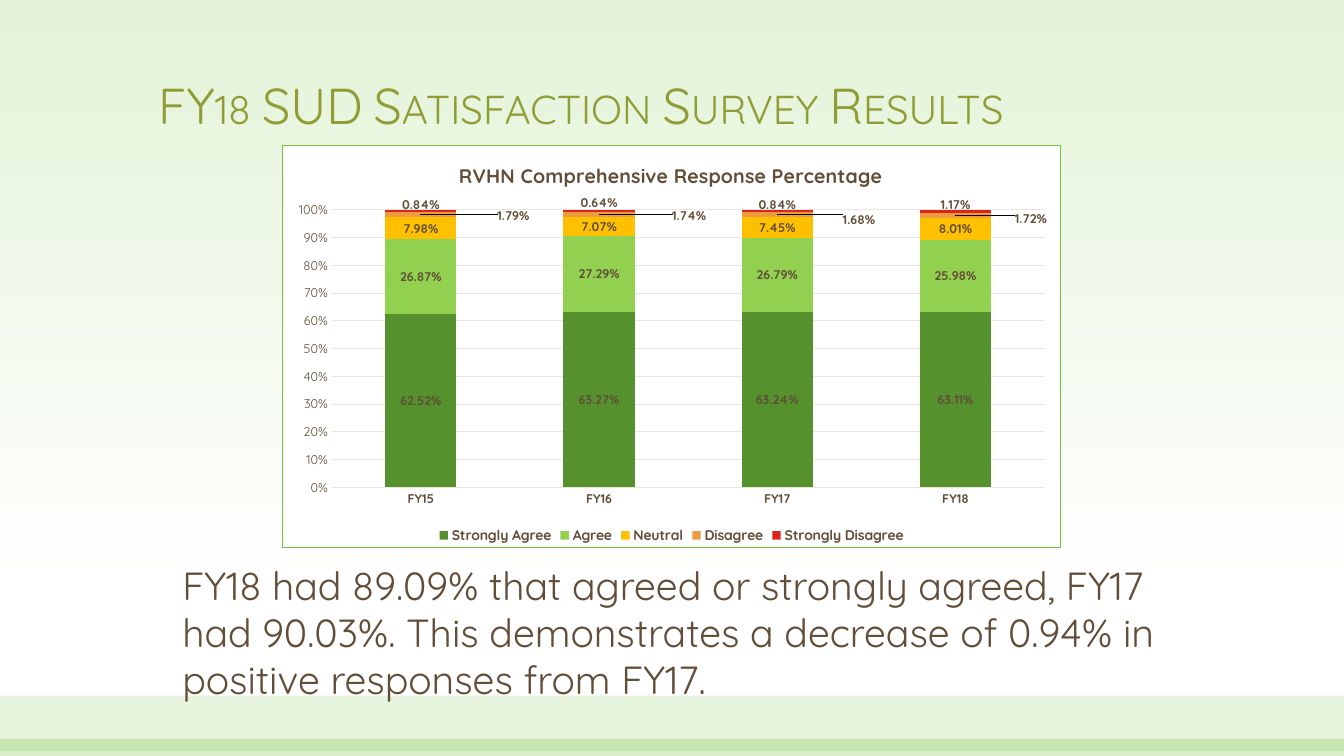
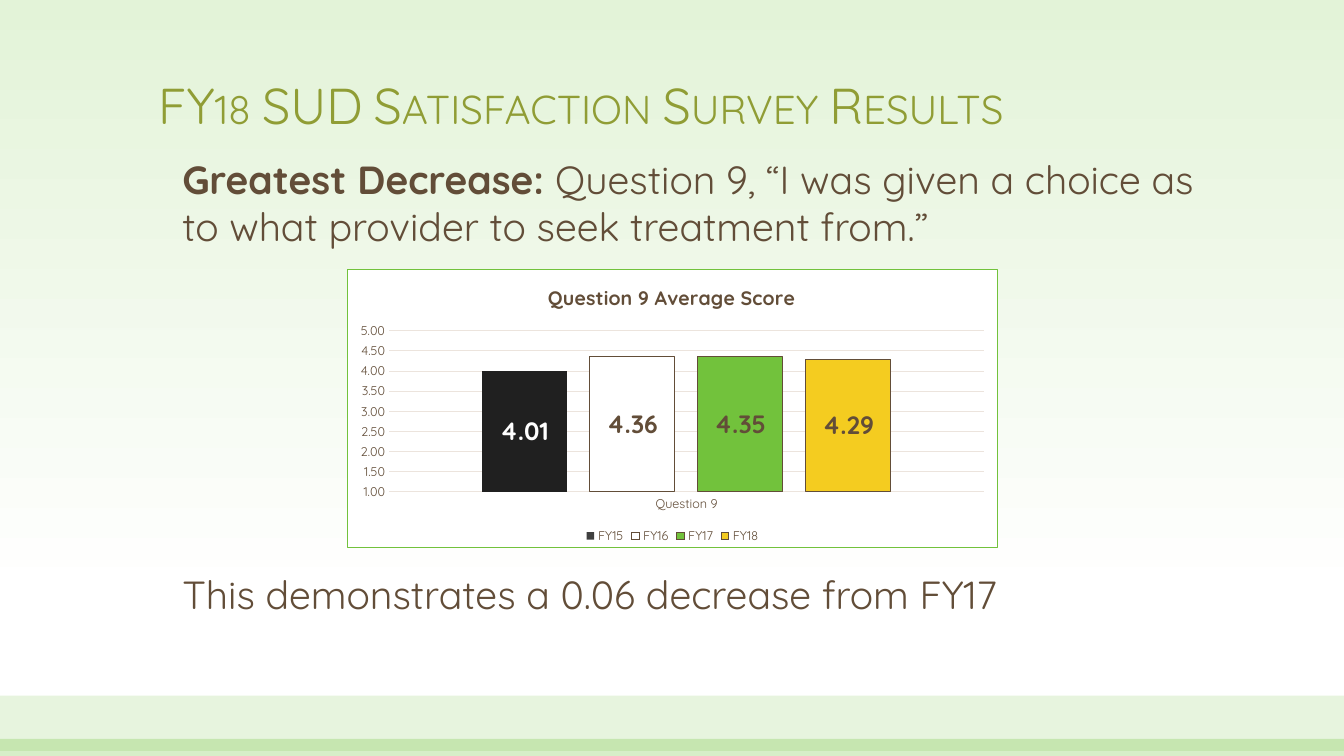
from pptx import Presentation
from pptx.chart.data import CategoryChartData
from pptx.dml.color import RGBColor
from pptx.enum.chart import XL_CHART_TYPE, XL_LABEL_POSITION, XL_LEGEND_POSITION, XL_TICK_MARK
from pptx.enum.shapes import MSO_SHAPE
from pptx.enum.text import MSO_ANCHOR
from pptx.oxml import parse_xml
from pptx.oxml.ns import nsdecls, qn
from pptx.util import Pt
from lxml.etree import SubElement

PX = 9144  # EMU per px, 100 px to the inch
FONT = "Quicksand"
COLORS = {
    "title": "909D35", "text": "624D38", "green": "72C23C", "grid": "ECE4DD",
    "sky": "E3F3D8", "white": "FFFFFF", "black": "202020", "charcoal": "404040",
    "strongly agree": "55922D", "agree": "92D050", "neutral": "FFC000",
    "disagree": "EE9B40", "strongly disagree": "DD2418", "yellow": "F4CC20",
}
SLIDE_W, SLIDE_H = 1333, 750
TITLE = "FY18 SUD Satisfaction Survey Results"
TITLE_BOX = (147, 48, 1040, 119)
BANDS = [((0, 690, SLIDE_W, 55), 17), ((0, 733, SLIDE_W, 17), 28)]
NO_LEADER_LINES = (
    f"<c:extLst {nsdecls('c')}><c:ext uri='{{CE6537A1-D6FC-4f65-9D91-7224C49458BB}}'"
    " xmlns:c15='http://schemas.microsoft.com/office/drawing/2012/chart'>"
    "<c15:showLeaderLines val='0'/></c:ext></c:extLst>")


def rgb(name):
    return RGBColor.from_string(COLORS[name])


def emu(box):
    return [length * PX for length in box]


def style_font(font, size, color="text", bold=False):
    font.name, font.size, font.bold = FONT, Pt(size), bold
    font.color.rgb = rgb(color)


def style_line(line, color):
    line.color.rgb = rgb(color)
    line.width = Pt(0.75)


def add_background(slide):
    fill = slide.background.fill
    fill.gradient()
    fill.gradient_angle = 270
    for stop, color, position in zip(fill.gradient_stops, ("sky", "white"), (0, 0.79)):
        stop.color.rgb = rgb(color)
        stop.position = position


def add_band(slide, box, opacity):
    band = slide.shapes.add_shape(MSO_SHAPE.RECTANGLE, *emu(box))
    band.shadow.inherit = False
    band.line.fill.background()
    band.fill.solid()
    band.fill.fore_color.rgb = rgb("green")
    color = band.fill._xPr.find(".//" + qn("a:srgbClr"))
    SubElement(color, qn("a:alpha"), val=str(opacity * 1000))


def add_text(slide, box, parts, size=28, color="text"):
    """Add one paragraph made of (text, bold) parts."""
    frame = slide.shapes.add_textbox(*emu(box)).text_frame
    frame.word_wrap = True
    for words, bold in parts:
        run = frame.paragraphs[0].add_run()
        run.text = words
        style_font(run.font, size, color, bold)
    return frame


def add_title(slide):
    frame = add_text(slide, TITLE_BOX, [(TITLE, False)], 36, "title")
    frame.vertical_anchor = MSO_ANCHOR.MIDDLE
    paragraph = frame.paragraphs[0]
    paragraph.line_spacing = 0.9
    paragraph.runs[0].font._element.set("cap", "small")


def add_survey_slide(deck):
    slide = deck.slides.add_slide(deck.slide_layouts[6])
    add_background(slide)
    for box, opacity in BANDS:
        add_band(slide, box, opacity)
    add_title(slide)
    return slide


def set_layout(parent, index, **settings):
    """Give a chart part a manual layout, new ones at the given child index."""
    layout = parse_xml(f"<c:layout {nsdecls('c')}><c:manualLayout/></c:layout>")
    for tag, value in settings.items():
        SubElement(layout[0], qn(f"c:{tag}"), val=str(value))
    present = parent.find(qn("c:layout"))
    if present is not None:
        parent.remove(present)
    parent.insert(index, layout)


def style_axes(chart, tick_format, bold_categories):
    categories, values = chart.category_axis, chart.value_axis
    for axis, bold in ((categories, bold_categories), (values, False)):
        axis.major_tick_mark = axis.minor_tick_mark = XL_TICK_MARK.NONE
        style_font(axis.tick_labels.font, 9, bold=bold)
    style_line(categories.format.line, "grid")
    values.format.line.fill.background()
    values.has_major_gridlines = True
    style_line(values.major_gridlines.format.line, "grid")
    values.tick_labels.number_format = tick_format
    values.tick_labels.number_format_is_linked = False


def style_series(series, color, label_size, label_format, label_color="text"):
    series.format.fill.solid()
    series.format.fill.fore_color.rgb = rgb(color)
    labels = series.data_labels
    labels.show_value = True
    labels.position = XL_LABEL_POSITION.CENTER
    labels.number_format = label_format
    labels.number_format_is_linked = False
    style_font(labels.font, label_size, label_color, True)
    labels._element.append(parse_xml(NO_LEADER_LINES))


def shift_labels(series, offsets, size):
    """Move each label by an (x, y) fraction of the chart."""
    for index, (x, y) in enumerate(offsets):
        label = series.points[index].data_label
        style_font(label.font, size, bold=True)
        label.position = XL_LABEL_POSITION.CENTER
        element = label.font._element.getparent()
        while element.tag != qn("c:dLbl"):
            element = element.getparent()
        set_layout(element, 1, x=x, y=y)


def add_survey_chart(slide, box, kind, title, title_at, plot_at, categories, scores, value_format):
    data = CategoryChartData(number_format=value_format)
    data.categories = categories
    for name, values in scores.items():
        data.add_series(name, values)
    chart = slide.shapes.add_chart(kind, *emu(box), data).chart
    style_font(chart.font, 10)
    chart._chartSpace.find(qn("c:chart")).addnext(parse_xml(
        f"<c:spPr {nsdecls('c', 'a')}>"
        f"<a:solidFill><a:srgbClr val='{COLORS['white']}'/></a:solidFill>"
        f"<a:ln w='9525'><a:solidFill><a:srgbClr val='{COLORS['green']}'/></a:solidFill></a:ln>"
        "</c:spPr>"))

    heading = chart.chart_title.text_frame
    heading.text = title
    style_font(heading.paragraphs[0].runs[0].font, 14, bold=True)
    edges = {"xMode": "edge", "yMode": "edge"}
    set_layout(chart.chart_title._element, 1, **edges, **dict(zip("xy", title_at)))
    plot_area = chart._chartSpace.find(".//" + qn("c:plotArea"))
    set_layout(plot_area, 0, layoutTarget="inner", **edges, **dict(zip("xywh", plot_at)))

    chart.has_legend = True
    chart.legend.position = XL_LEGEND_POSITION.BOTTOM
    chart.legend.include_in_layout = False
    chart.plots[0].vary_by_categories = False
    return chart


def add_response_chart(slide, box):
    scores = {
        "Strongly Agree": (0.6252, 0.6327, 0.6324, 0.6311),
        "Agree": (0.2687, 0.2729, 0.2679, 0.2598),
        "Neutral": (0.0798, 0.0707, 0.0745, 0.0801),
        "Disagree": (0.0179, 0.0174, 0.0168, 0.0172),
        "Strongly Disagree": (0.0084, 0.0064, 0.0084, 0.0117),
    }
    label_offsets = {
        "Disagree": [(0.119, 0.002), (0.116, 0.005), (0.105, 0.014), (0.097, 0.009)],
        "Strongly Disagree": [(0, -0.017), (0, -0.02), (0, -0.017), (0, -0.017)],
    }
    chart = add_survey_chart(
        slide, box, XL_CHART_TYPE.COLUMN_STACKED_100, "RVHN Comprehensive Response Percentage",
        (0.222, 0.03), (0.063, 0.16, 0.917, 0.69),
        ("FY15", "FY16", "FY17", "FY18"), scores, "0.00%")
    style_axes(chart, "0%", True)
    chart.value_axis.major_unit = 0.1
    style_font(chart.legend.font, 10, bold=True)
    plot = chart.plots[0]
    plot.gap_width, plot.overlap = 150, 100
    for series in plot.series:
        style_series(series, series.name.lower(), 9, "0.00%")
        shift_labels(series, label_offsets.get(series.name, ()), 9)


def add_question_chart(slide, box):
    scores = {"FY15": [4.01], "FY16": [4.36], "FY17": [4.35], "FY18": [4.29]}
    chart = add_survey_chart(
        slide, box, XL_CHART_TYPE.COLUMN_CLUSTERED, "Question 9 Average Score",
        (0.303, 0.035), (0.064, 0.22, 0.915, 0.579), ["Question 9"], scores, "0.00")
    style_axes(chart, "#,##0.00", False)
    values = chart.value_axis
    values.minimum_scale, values.maximum_scale, values.major_unit = 1, 5, 0.5
    style_font(chart.legend.font, 9)
    plot = chart.plots[0]
    plot.gap_width, plot.overlap = 219, -27
    first, *later = plot.series
    style_series(first, "charcoal", 18, "0.00", "white")
    first_bar = first.points[0].format.fill
    first_bar.solid()
    first_bar.fore_color.rgb = rgb("black")
    for series, color in zip(later, ("white", "green", "yellow")):
        style_series(series, color, 18, "0.00")
        style_line(series.format.line, "text")


def build_response_slide(deck):
    slide = add_survey_slide(deck)
    add_text(slide, (171, 552, 1033, 151), [(
        "FY18 had 89.09% that agreed or strongly agreed, FY17 had 90.03%. "
        "This demonstrates a decrease of 0.94% in positive responses from FY17.", False)])
    add_response_chart(slide, (280, 144, 772, 400))


def build_question_slide(deck):
    slide = add_survey_slide(deck)
    add_text(slide, (171, 561, 1033, 57), [("This demonstrates a 0.06 decrease from FY17", False)])
    add_text(slide, (171, 149, 1033, 104), [
        ("Greatest Decrease: ", True),
        ("Question 9, “I was given a choice as to what provider to seek treatment from.”", False)])
    add_question_chart(slide, (344, 267, 646, 277))


def main():
    deck = Presentation()
    deck.slide_width, deck.slide_height = emu((SLIDE_W, SLIDE_H))
    build_response_slide(deck)
    build_question_slide(deck)
    deck.save("out.pptx")


if __name__ == "__main__":
    main()
